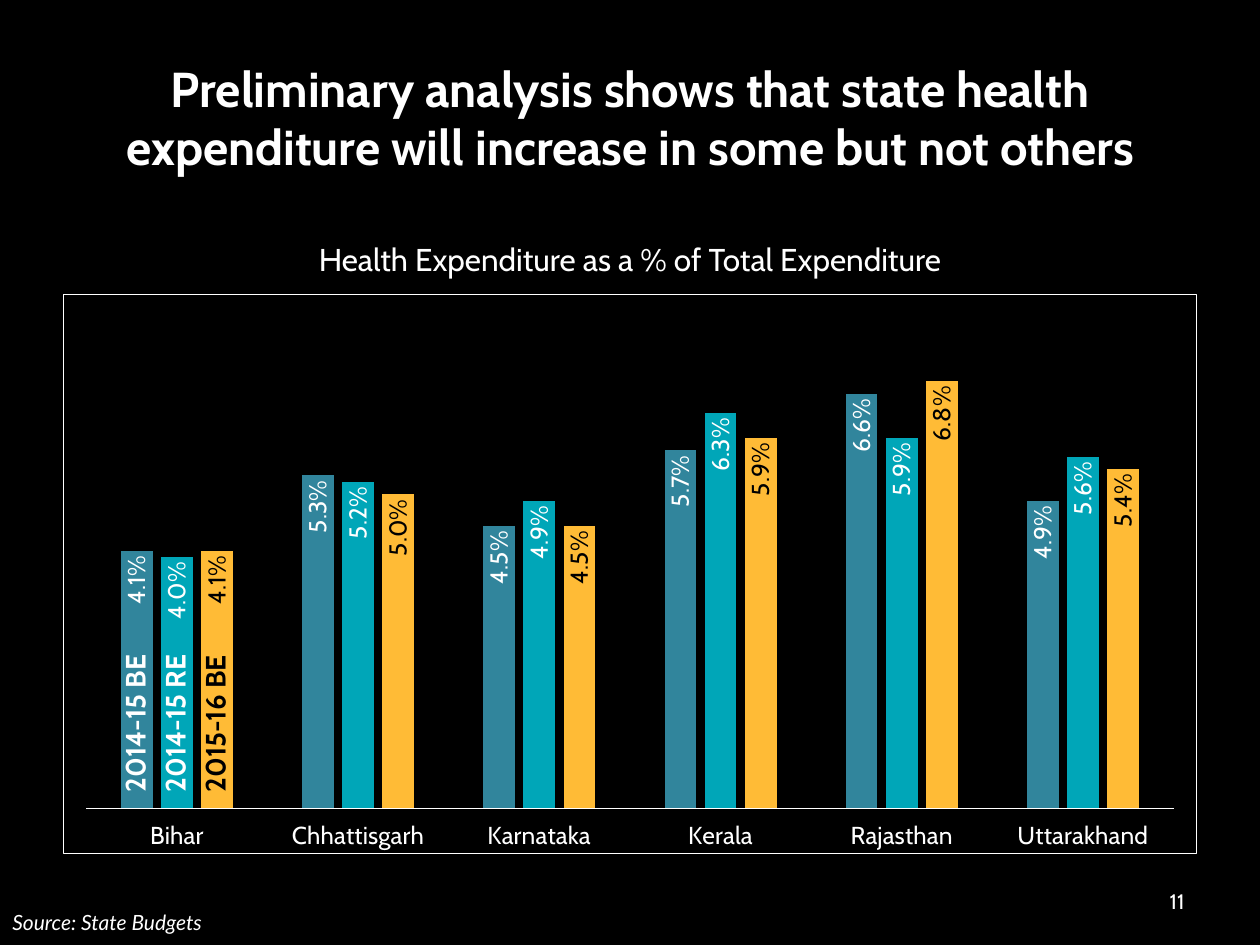
from lxml import etree
from pptx import Presentation
from pptx.chart.data import CategoryChartData
from pptx.dml.color import RGBColor
from pptx.enum.chart import XL_CHART_TYPE, XL_LABEL_POSITION, XL_TICK_LABEL_POSITION, XL_TICK_MARK
from pptx.enum.text import MSO_ANCHOR, PP_ALIGN
from pptx.oxml import parse_xml
from pptx.oxml.ns import nsdecls, qn
from pptx.util import Pt

COLUMN = XL_CHART_TYPE.COLUMN_CLUSTERED
INSIDE_END = XL_LABEL_POSITION.INSIDE_END
NO_TICK = XL_TICK_MARK.NONE
LOW = XL_TICK_LABEL_POSITION.LOW
TOP, MIDDLE = MSO_ANCHOR.TOP, MSO_ANCHOR.MIDDLE
LEFT, CENTER, RIGHT = PP_ALIGN.LEFT, PP_ALIGN.CENTER, PP_ALIGN.RIGHT

BLACK = RGBColor(0x00, 0x00, 0x00)
WHITE = RGBColor(0xFF, 0xFF, 0xFF)
BLUE = RGBColor(0x31, 0x85, 0x9C)
TEAL = RGBColor(0x00, 0xA6, 0xB8)
AMBER = RGBColor(0xFF, 0xBB, 0x36)

TITLE = "Preliminary analysis shows that state health expenditure will increase in some but not others"
STATES = ["Bihar", "Chhattisgarh", "Karnataka", "Kerala", "Rajasthan", "Uttarakhand"]
# budget, bar colour, label colour, share of total expenditure per state
BUDGETS = [
    ("2014-15 BE", BLUE, WHITE, [0.041, 0.053, 0.045, 0.057, 0.066, 0.049]),
    ("2014-15 RE", TEAL, WHITE, [0.04, 0.052, 0.049, 0.063, 0.059, 0.056]),
    ("2015-16 BE", AMBER, BLACK, [0.041, 0.05, 0.045, 0.059, 0.068, 0.054]),
]
# text, box in px, alignment, anchor, font
CAPTIONS = [
    ("11", (903, 876, 294, 50), RIGHT, MIDDLE, {"size": Pt(12)}),
    ("Source: State Budgets", (0, 903, 630, 38), LEFT, TOP,
     {"size": Pt(12), "name": "Lato", "italic": True}),
    ("Health Expenditure as a % of Total Expenditure", (64, 234, 1132, 50), CENTER, TOP,
     {"size": Pt(18)}),
]
PLOT = {"x": 0.02, "y": 0.02, "w": 0.96, "h": 0.9}  # fractions of the chart
BAR_STEP = 40
EMU_PER_PX = 914400 / 126


def px(*lengths):
    return [round(n * EMU_PER_PX) for n in lengths]


def set_font(font, color=WHITE, **values):
    for name, value in {"name": "Cabin", "size": Pt(14), **values}.items():
        setattr(font, name, value)
    font.color.rgb = color


def add_text(slide, text, box, align=LEFT, anchor=TOP, font=None, wrap=True):
    sp = slide.shapes.add_textbox(*px(*box))
    tf = sp.text_frame
    tf.word_wrap, tf.vertical_anchor = wrap, anchor
    p = tf.paragraphs[0]
    p.alignment = align
    r = p.add_run()
    r.text = text
    set_font(r.font, **(font or {}))
    return sp


def add_frame_and_layout(chart):
    """Outline the chart area and fix the inner plot area."""
    frame = parse_xml(
        f'<c:spPr {nsdecls("c", "a")}><a:noFill/><a:ln w="9525"><a:solidFill>'
        f'<a:srgbClr val="{WHITE}"/></a:solidFill></a:ln></c:spPr>')
    chart_el = chart._chartSpace.find(qn("c:chart"))
    chart_el.addnext(frame)
    plot_area = chart_el.find(qn("c:plotArea"))
    for old in plot_area.findall(qn("c:layout")):
        plot_area.remove(old)
    layout = parse_xml(f'<c:layout {nsdecls("c")}><c:manualLayout/></c:layout>')
    settings = {"layoutTarget": "inner", "xMode": "edge", "yMode": "edge", **PLOT}
    for tag, value in settings.items():
        etree.SubElement(layout[0], qn(f"c:{tag}")).set("val", str(value))
    plot_area.insert(0, layout)


def add_expenditure_chart(slide):
    data = CategoryChartData(number_format="0.0%")
    data.categories = STATES
    for name, _, _, values in BUDGETS:
        data.add_series(name, values)
    chart = slide.shapes.add_chart(COLUMN, *px(63, 294, 1134, 560), data).chart
    chart.has_legend = chart.has_title = False
    set_font(chart.font)
    add_frame_and_layout(chart)

    axis = chart.category_axis
    axis.major_tick_mark = axis.minor_tick_mark = NO_TICK
    axis.tick_label_position = LOW
    axis.format.line.color.rgb = WHITE
    axis.format.line.width = Pt(0.75)
    set_font(axis.tick_labels.font)
    axis = chart.value_axis
    axis.minimum_scale, axis.maximum_scale = 0, 0.08
    axis.has_major_gridlines = axis.visible = False

    plot = chart.plots[0]
    plot.gap_width, plot.overlap, plot.vary_by_categories = 219, -27, False
    for series, (_, fill, label_color, _) in zip(plot.series, BUDGETS):
        series.format.fill.solid()
        series.format.fill.fore_color.rgb = fill
        labels = series.data_labels
        labels.show_value = True
        labels.position = INSIDE_END
        labels.number_format, labels.number_format_is_linked = "0.0%", False
        set_font(labels.font, label_color)
        body = labels._element.find(qn("c:txPr")).find(qn("a:bodyPr"))
        body.set("rot", "-5400000")
        body.set("vert", "horz")


def main():
    prs = Presentation()
    prs.slide_width, prs.slide_height = px(1260, 945)
    slide = prs.slides.add_slide(prs.slide_layouts[5])
    slide.background.fill.solid()
    slide.background.fill.fore_color.rgb = BLACK

    title = slide.shapes.title
    title.left, title.top, title.width, title.height = px(63, 38, 1134, 158)
    title.text_frame.text = TITLE
    title.text_frame.vertical_anchor = MIDDLE
    p = title.text_frame.paragraphs[0]
    p.alignment = CENTER
    set_font(p.runs[0].font, size=Pt(28), bold=True)

    add_expenditure_chart(slide)
    for i, (name, _, color, _) in enumerate(BUDGETS):
        font = {"color": color, "size": Pt(16), "bold": True}
        sp = add_text(slide, name, (53 + i * BAR_STEP, 699, 164, 47), font=font, wrap=False)
        sp.rotation = 270
    for text, box, align, anchor, font in CAPTIONS:
        add_text(slide, text, box, align, anchor, font)
    prs.save("out.pptx")


if __name__ == "__main__":
    main()
